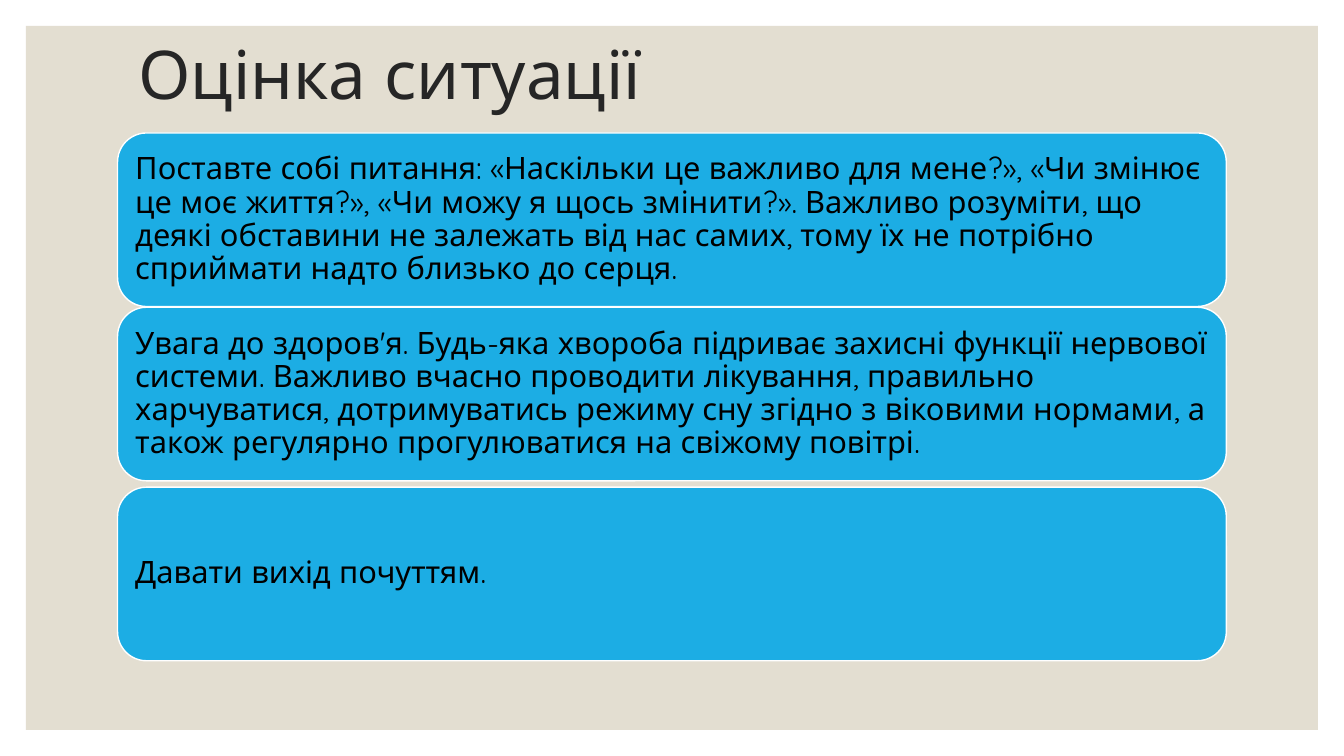
import pptx
import pptx.util
import pptx.dml.color
import pptx.enum.shapes
import pptx.enum.text

Pt = pptx.util.Pt
SHAPES = pptx.enum.shapes.MSO_SHAPE
ALIGN = pptx.enum.text.PP_ALIGN
ANCHOR = pptx.enum.text.MSO_ANCHOR

TITLE = "Оцінка ситуації"
ADVICE = [
    (95, "Поставте собі питання: «Наскільки це важливо для мене?», «Чи змінює це моє життя?», "
         "«Чи можу я щось змінити?». Важливо розуміти, що деякі обставини не залежать від нас самих, "
         "тому їх не потрібно сприймати надто близько до серця."),
    (219.5, "Увага до здоров'я. Будь-яка хвороба підриває захисні функції нервової системи. "
            "Важливо вчасно проводити лікування, правильно харчуватися, дотримуватись режиму сну "
            "згідно з віковими нормами, а також регулярно прогулюватися на свіжому повітрі."),
    (348, "Давати вихід почуттям."),
]
THEME = {
    "font": "Quicksand", "title_size": 48, "card_size": 22,
    "title": "262626", "text": "000000", "panel": "E3DED1", "card": "1CADE4", "outline": "FFFFFF",
}
SLIDE_WIDTH, SLIDE_HEIGHT = 960, 540
MARGIN = 18.6
CARD_LEFT, CARD_HEIGHT = 84, 124
CARD_INSET = 6.6


def color(name):
    return pptx.dml.color.RGBColor.from_string(THEME[name])


def apply(target, values):
    for name, value in values.items():
        setattr(target, name, value)


def write(shape, text, size, color_name, frame_format):
    frame = shape.text_frame
    frame.text = text
    apply(frame, {"word_wrap": True, "auto_size": pptx.enum.text.MSO_AUTO_SIZE.NONE,
                  "vertical_anchor": ANCHOR.MIDDLE, **frame_format})
    paragraph = frame.paragraphs[0]
    apply(paragraph, {"alignment": ALIGN.LEFT, "line_spacing": 0.9})
    font = paragraph.runs[0].font
    apply(font, {"name": THEME["font"], "size": Pt(THEME[size])})
    font.color.rgb = color(color_name)


def add_block(slide, kind, box, fill):
    shape = slide.shapes.add_shape(kind, *map(Pt, box))
    shape.shadow.inherit = False
    shape.fill.solid()
    shape.fill.fore_color.rgb = color(fill)
    shape.line.fill.background()
    return shape


def main():
    presentation = pptx.Presentation()
    apply(presentation, {"slide_width": Pt(SLIDE_WIDTH), "slide_height": Pt(SLIDE_HEIGHT)})
    slide = presentation.slides.add_slide(presentation.slide_layouts[5])

    panel = add_block(slide, SHAPES.RECTANGLE,
                      (MARGIN, MARGIN, SLIDE_WIDTH - 2 * MARGIN, SLIDE_HEIGHT - 2 * MARGIN), "panel")
    title = slide.shapes.title
    title.element.addprevious(panel.element)
    apply(title, {"left": Pt(91.5), "top": Pt(9.5), "width": Pt(785), "height": Pt(92)})
    write(title, TITLE, "title_size", "title", {})

    insets = {f"margin_{side}": Pt(CARD_INSET) for side in ("left", "top", "right", "bottom")}
    for top, text in ADVICE:
        card = add_block(slide, SHAPES.ROUNDED_RECTANGLE,
                         (CARD_LEFT, top, SLIDE_WIDTH - 2 * CARD_LEFT, CARD_HEIGHT), "card")
        card.line.color.rgb = color("outline")
        card.line.width = Pt(1)
        write(card, text, "card_size", "text", insets)

    presentation.save("out.pptx")


if __name__ == "__main__":
    main()
